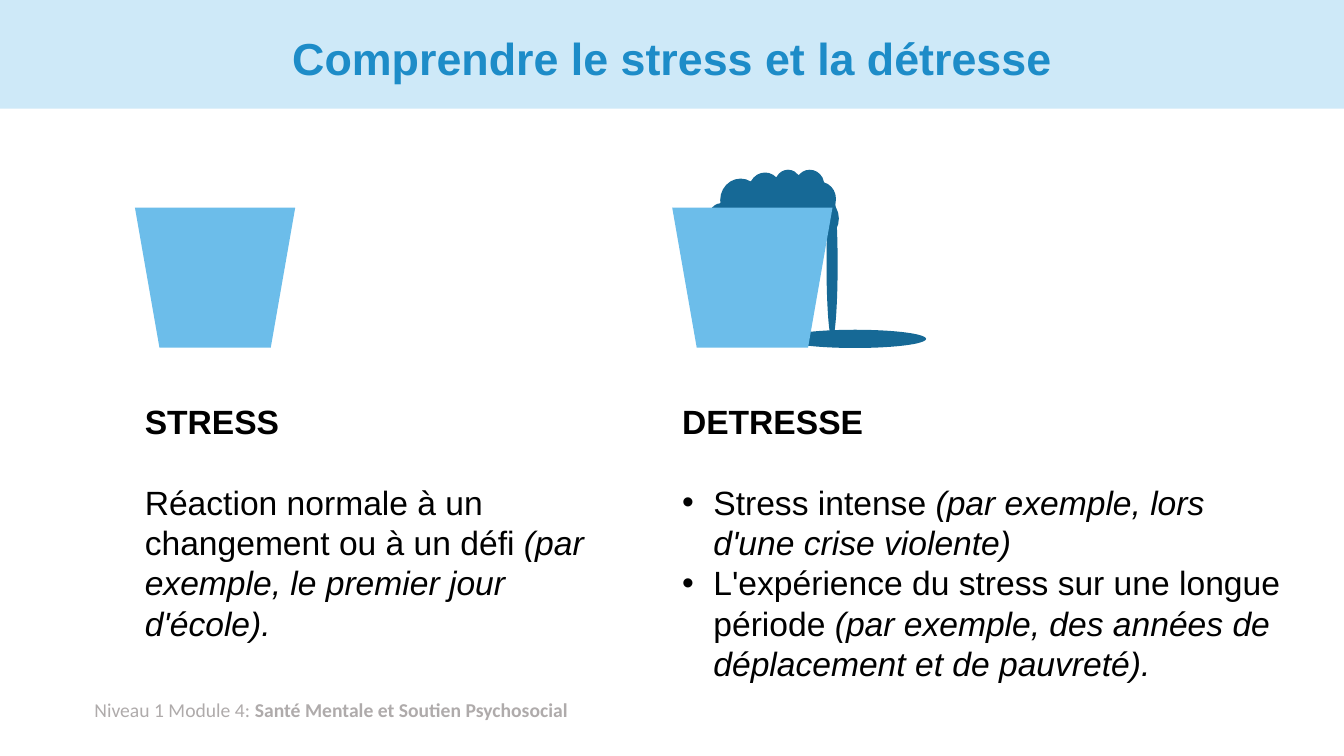
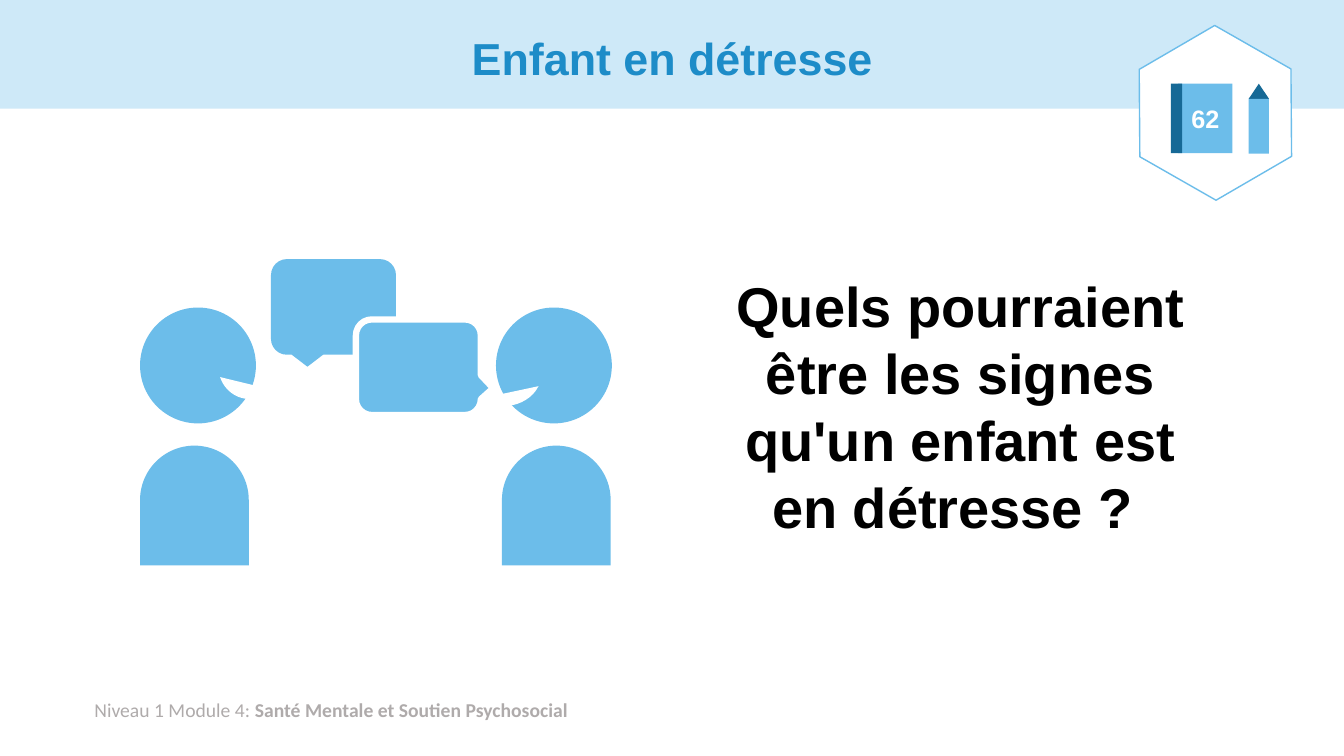
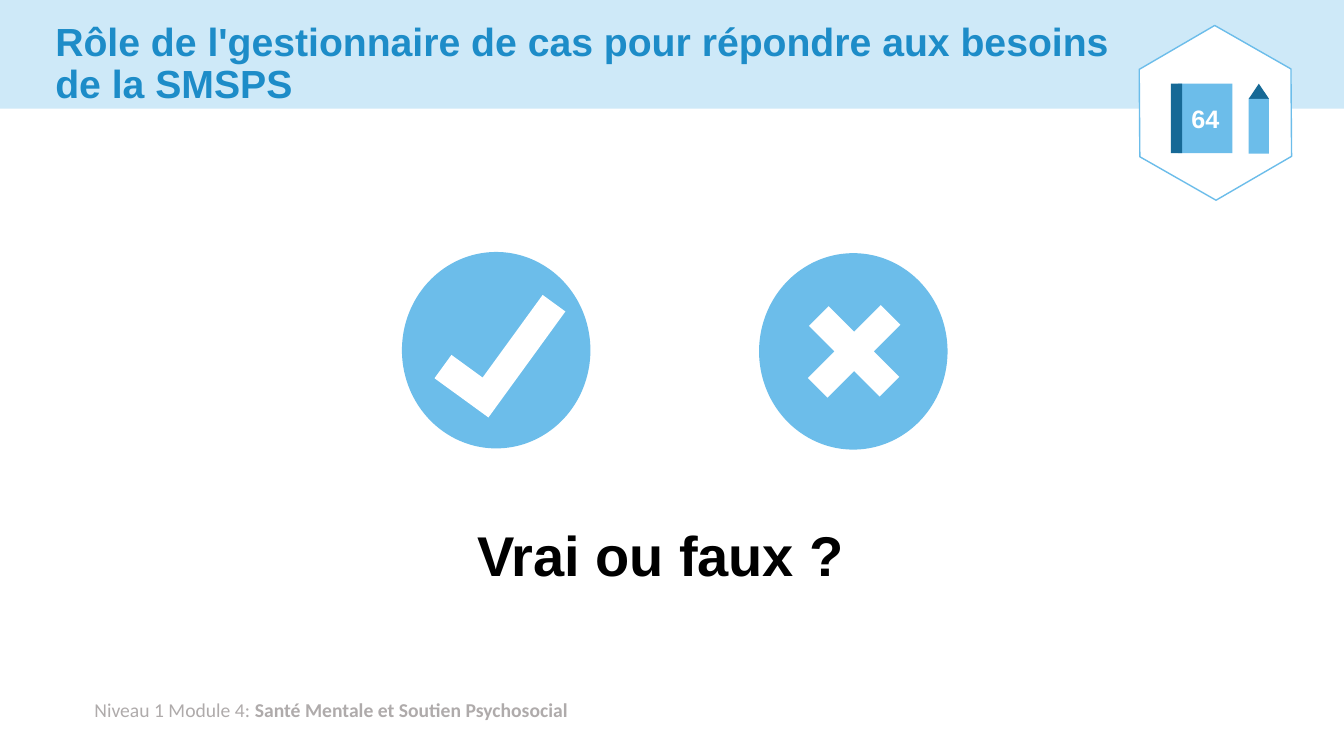
from lxml import etree
from pptx import Presentation
from pptx.dml.color import RGBColor
from pptx.enum.shapes import MSO_SHAPE
from pptx.enum.text import MSO_ANCHOR, MSO_AUTO_SIZE, PP_ALIGN
from pptx.oxml.ns import qn
from pptx.util import Cm, Pt

# Palette and type
PALE_BLUE = RGBColor(0xCE, 0xE9, 0xF8)
LIGHT_BLUE = RGBColor(0x6C, 0xBD, 0xEA)
TITLE_BLUE = RGBColor(0x1D, 0x8C, 0xC8)
DARK_BLUE = RGBColor(0x16, 0x69, 0x96)
GREY = RGBColor(0xAF, 0xAB, 0xAB)
WHITE = RGBColor(0xFF, 0xFF, 0xFF)
BLACK = RGBColor(0x00, 0x00, 0x00)
FONT, FOOTER_FONT = "Arial", "Calibri"

# Enum members
LEFT, CENTER = PP_ALIGN.LEFT, PP_ALIGN.CENTER
TOP, MIDDLE = MSO_ANCHOR.TOP, MSO_ANCHOR.MIDDLE
NO_AUTOFIT = MSO_AUTO_SIZE.NONE
RECTANGLE, OVAL = MSO_SHAPE.RECTANGLE, MSO_SHAPE.OVAL
TRAPEZOID, CLOUD = MSO_SHAPE.TRAPEZOID, MSO_SHAPE.CLOUD
HEXAGON, TRIANGLE = MSO_SHAPE.HEXAGON, MSO_SHAPE.ISOSCELES_TRIANGLE
TORSO, CHORD = MSO_SHAPE.ROUND_2_SAME_RECTANGLE, MSO_SHAPE.CHORD
CALLOUT = MSO_SHAPE.ROUNDED_RECTANGULAR_CALLOUT
CORNER, PLUS = MSO_SHAPE.CORNER, MSO_SHAPE.MATH_PLUS

# Slide size and the title's usual place, in centimetres
SLIDE_WIDTH, SLIDE_HEIGHT = 33.87, 19.05
TITLE_BOX = (2.34, 0.33, 29.21, 2.41)
BULLET_INDENT = Cm(0.79)


def cm_box(box):
    return [Cm(length) for length in box]


def place(shape, box):
    shape.left, shape.top, shape.width, shape.height = cm_box(box)


def set_font(font, size, color, bold=None, name=FONT):
    font.name, font.size, font.bold = name, Pt(size), bold
    font.color.rgb = color


def add_shape(slide, kind, box, fill, line=None, line_width=1, rotation=0, adjustments=()):
    shape = slide.shapes.add_shape(kind, *cm_box(box))
    shape.shadow.inherit = False
    shape.fill.solid()
    shape.fill.fore_color.rgb = fill
    if line is None:
        shape.line.fill.background()
    else:
        shape.line.color.rgb = line
        shape.line.width = Pt(line_width)
    shape.rotation = rotation
    for index, value in enumerate(adjustments):
        shape.adjustments[index] = value
    return shape


def add_text(slide, box, text="", size=24, bold=None, align=LEFT, anchor=TOP):
    text_box = slide.shapes.add_textbox(*cm_box(box))
    frame = text_box.text_frame
    frame.word_wrap = True
    frame.vertical_anchor = anchor
    paragraph = frame.paragraphs[0]
    paragraph.text = text
    paragraph.alignment = align
    set_font(paragraph.font, size, BLACK, bold)
    return text_box


def add_bullet(paragraph):
    properties = paragraph._p.get_or_add_pPr()
    properties.set("marL", str(BULLET_INDENT))
    properties.set("indent", str(-BULLET_INDENT))
    font = etree.SubElement(properties, qn("a:buFont"))
    font.set("typeface", FONT)
    etree.SubElement(properties, qn("a:buChar")).set("char", "•")
    # Default run properties must come last
    defaults = properties.find(qn("a:defRPr"))
    if defaults is not None:
        properties.append(defaults)


def add_definition(slide, box, heading, items, bulleted=False):
    """Bold heading followed by (plain, italic) statements."""
    frame = add_text(slide, box, heading, bold=True).text_frame
    frame.paragraphs[0].space_after = Pt(28.8)
    for plain, italic in items:
        paragraph = frame.add_paragraph()
        set_font(paragraph.font, 24, BLACK)
        paragraph.add_run().text = plain
        example = paragraph.add_run()
        example.text = italic
        example.font.italic = True
        if bulleted:
            add_bullet(paragraph)


def add_bucket(slide, left):
    add_shape(slide, TRAPEZOID, (left, 5.23, 4.04, 3.53), LIGHT_BLUE,
              rotation=180, adjustments=[0.175])


def add_page_badge(slide, number):
    """Hexagon with a workbook page number and a pencil."""
    add_shape(slide, HEXAGON, (28.42, 0.94, 4.42, 3.81), WHITE, LIGHT_BLUE,
              rotation=29.7, adjustments=[0.29])
    book = add_shape(slide, RECTANGLE, (29.69, 2.11, 1.37, 1.75), LIGHT_BLUE)
    frame = book.text_frame
    frame.margin_left = frame.margin_right = 0
    frame.vertical_anchor = MIDDLE
    paragraph = frame.paragraphs[0]
    paragraph.text = number
    paragraph.alignment = CENTER
    set_font(paragraph.font, 18, WHITE, True)
    add_shape(slide, RECTANGLE, (29.51, 2.11, 0.28, 1.75), DARK_BLUE)
    add_shape(slide, TRIANGLE, (31.47, 2.11, 0.51, 0.38), DARK_BLUE)
    add_shape(slide, RECTANGLE, (31.47, 2.49, 0.51, 1.38), LIGHT_BLUE)


def add_person(slide, head_left, body_left, mouth_box, flipped=False):
    add_shape(slide, OVAL, (head_left, 7.75, 2.92, 2.92), LIGHT_BLUE)
    add_shape(slide, TORSO, (body_left, 11.23, 2.74, 3.02), LIGHT_BLUE,
              adjustments=[0.5, 0])
    mouth = add_shape(slide, CHORD, mouth_box, WHITE, adjustments=[27, 97.34])
    if flipped:
        mouth.element.spPr.xfrm.set("flipH", "1")


def set_up_layout(layout, slide):
    """Move the band and footer onto the layout so every slide shows them."""
    band = add_shape(slide, RECTANGLE, (0, 0, SLIDE_WIDTH, 2.74), PALE_BLUE)
    footer = add_text(slide, (2.13, 17.45, 15.7, 0.86))
    paragraph = footer.text_frame.paragraphs[0]
    set_font(paragraph.font, 14, GREY, name=FOOTER_FONT)
    paragraph.add_run().text = "Niveau 1 Module 4: "
    module = paragraph.add_run()
    module.text = "Santé Mentale et Soutien Psychosocial"
    module.font.bold = True
    for shape in (band, footer):
        layout.shapes.element.append(shape.element)


def add_title(slide, text, box=TITLE_BOX, size=32, align=CENTER):
    title = slide.shapes.title
    place(title, box)
    frame = title.text_frame
    frame.auto_size = NO_AUTOFIT
    frame.vertical_anchor = MIDDLE
    paragraph = frame.paragraphs[0]
    paragraph.text = text
    paragraph.alignment = align
    paragraph.line_spacing = 0.9
    set_font(paragraph.font, size, TITLE_BLUE, True)


def build_stress_slide(slide):
    add_title(slide, "Comprendre le stress et la détresse")
    add_definition(slide, (16.94, 9.98, 15.67, 7.44), "DETRESSE", [
        ("Stress intense ", "(par exemple, lors d'une crise violente)"),
        ("L'expérience du stress sur une longue période ",
         "(par exemple, des années de déplacement et de pauvreté)."),
    ], bulleted=True)
    add_definition(slide, (3.4, 9.98, 11.73, 5.38), "STRESS", [
        ("Réaction normale à un changement ou à un défi ",
         "(par exemple, le premier jour d'école)."),
    ])
    add_bucket(slide, 3.4)
    # Overflow: foam, stream and puddle behind the second bucket
    add_shape(slide, CLOUD, (17.86, 4.27, 3.28, 2.54), DARK_BLUE)
    add_shape(slide, OVAL, (20.83, 4.78, 0.28, 3.76), DARK_BLUE)
    add_shape(slide, OVAL, (19.76, 8.31, 3.58, 0.46), DARK_BLUE)
    add_bucket(slide, 16.94)


def build_child_slide(slide):
    add_title(slide, "Enfant en détresse")
    add_text(slide, (18.03, 3.89, 12.34, 12.67),
             "Quels pourraient être les signes qu'un enfant est en détresse ? ",
             40, True, CENTER, MIDDLE)
    add_page_badge(slide, "62")
    # Two people talking
    add_person(slide, 3.53, 3.53, (5.51, 8.46, 1.6, 1.6))
    add_person(slide, 12.5, 12.65, (11.68, 8.64, 1.96, 1.6), flipped=True)
    add_shape(slide, CALLOUT, (6.83, 6.53, 3.15, 2.41), LIGHT_BLUE)
    add_shape(slide, CALLOUT, (8.97, 8.05, 3.15, 2.41), LIGHT_BLUE, WHITE, 4.5,
              adjustments=[0.598, 0.219, 0.167])


def build_quiz_slide(slide):
    add_title(slide,
              "Rôle de l'gestionnaire de cas pour répondre aux besoins de la SMSPS",
              (1.14, 0.43, 27.23, 2.41), 28, LEFT)
    add_text(slide, (10.74, 13, 11.81, 1.96), "Vrai ou faux ?", 40, True, CENTER)
    add_page_badge(slide, "64")
    # True and false marks
    add_shape(slide, OVAL, (10.13, 6.35, 4.75, 4.95), LIGHT_BLUE)
    add_shape(slide, CORNER, (10.95, 7.85, 3.3, 1.68), WHITE,
              rotation=306, adjustments=[0.422, 0.433])
    add_shape(slide, OVAL, (19.13, 6.38, 4.75, 4.95), LIGHT_BLUE)
    add_shape(slide, PLUS, (19.81, 7.09, 3.43, 3.53), WHITE,
              rotation=45, adjustments=[0.204])


def main():
    presentation = Presentation()
    presentation.slide_width = Cm(SLIDE_WIDTH)
    presentation.slide_height = Cm(SLIDE_HEIGHT)
    layout = presentation.slide_layouts.get_by_name("Title Only")
    builders = (build_stress_slide, build_child_slide, build_quiz_slide)
    slides = [presentation.slides.add_slide(layout) for _ in builders]
    set_up_layout(layout, slides[0])
    for build, slide in zip(builders, slides):
        build(slide)
    presentation.save("out.pptx")


if __name__ == "__main__":
    main()
